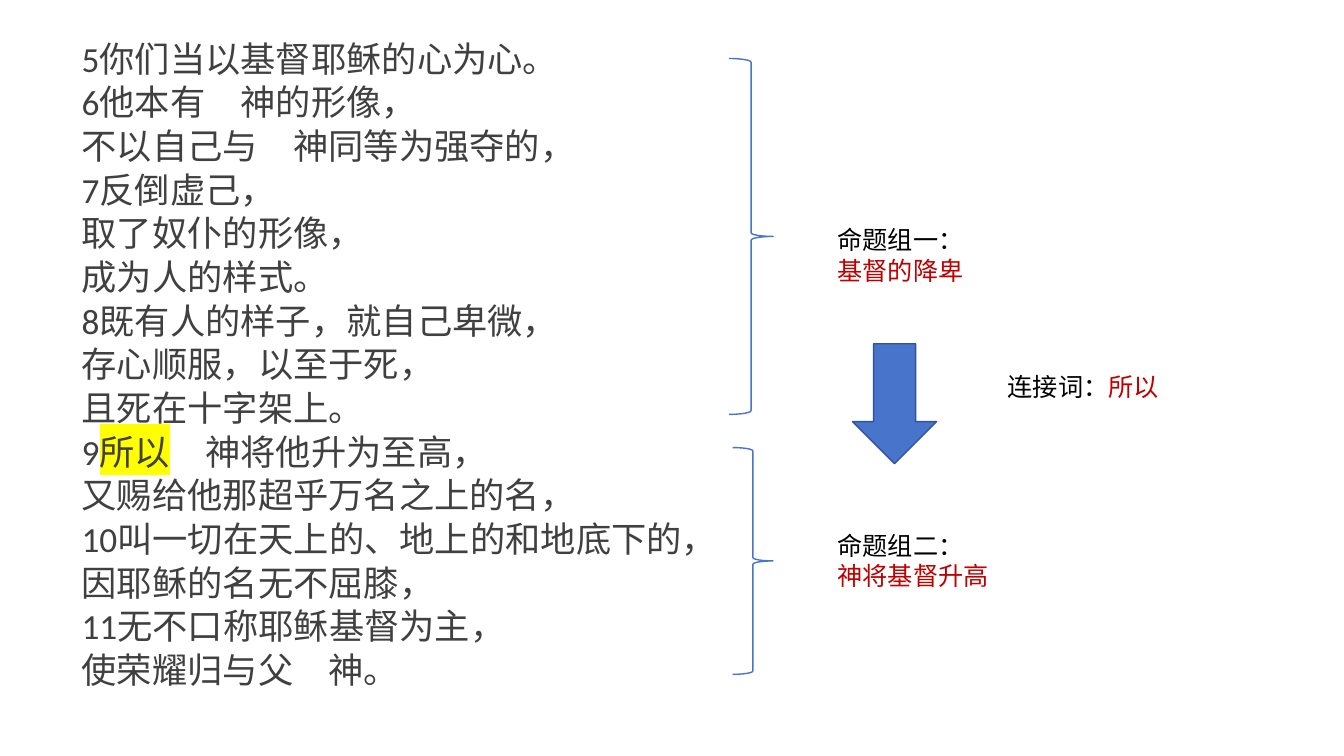
from lxml import etree
from pptx import Presentation, util as u
from pptx.dml.color import RGBColor
from pptx.enum import shapes, text
from pptx.oxml.ns import qn

BLUE, DARK_BLUE = "4874CB", "2E54A1"
BLACK, GREY, RED, YELLOW = "000000", "404040", "C00000", "FFFF00"

VERSES = [
    ["5你们当以基督耶稣的心为心。"],
    ["6他本有　神的形像，"],
    ["不以自己与　神同等为强夺的，"],
    ["7反倒虚己，"],
    ["取了奴仆的形像，"],
    ["成为人的样式。"],
    ["8既有人的样子，就自己卑微，"],
    ["存心顺服，以至于死，"],
    ["且死在十字架上。"],
    ["9", ("所以", YELLOW), "　神将他升为至高，"],
    ["又赐给他那超乎万名之上的名，"],
    ["10叫一切在天上的、地上的和地底下的，"],
    ["因耶稣的名无不屈膝，"],
    ["11无不口称耶稣基督为主，"],
    ["使荣耀归与父　神。"],
]


def color(value):
    return RGBColor.from_string(value)


class SlideBuilder:
    font_name = "Calibri"
    verse_size = 25.2
    label_size = 18

    def __init__(self, presentation):
        self.slide = presentation.slides.add_slide(presentation.slide_layouts[1])
        title = self.slide.shapes.title
        title.element.getparent().remove(title.element)

    def run(self, paragraph, words, size, fill, highlight=None):
        run = paragraph.add_run()
        run.text = words
        run.font.size = u.Pt(size)
        run.font.name = self.font_name
        run.font.color.rgb = color(fill)
        if highlight:
            mark = etree.Element(qn("a:highlight"))
            etree.SubElement(mark, qn("a:srgbClr"), val=highlight)
            run.font.fill
            run.font._element.find(qn("a:solidFill")).addnext(mark)

    def paragraphs(self, frame, count):
        for _ in range(count - 1):
            frame.add_paragraph()
        return frame.paragraphs

    def passage(self, left, top, width, height, verses):
        body = self.slide.placeholders[1]
        body.left, body.top = u.Pt(left), u.Pt(top)
        body.width, body.height = u.Pt(width), u.Pt(height)
        frame = body.text_frame
        frame.auto_size = text.MSO_AUTO_SIZE.NONE
        frame.vertical_anchor = text.MSO_ANCHOR.TOP
        for paragraph, verse in zip(self.paragraphs(frame, len(verses)), verses):
            paragraph.line_spacing = 0.7
            paragraph.space_before = u.Pt(10)
            paragraph.space_after = u.Pt(0)
            properties = paragraph._p.get_or_add_pPr()
            properties.set("marL", "0")
            properties.set("indent", "0")
            etree.SubElement(properties, qn("a:buNone"))
            for part in verse:
                words, highlight = (part, None) if isinstance(part, str) else part
                self.run(paragraph, words, self.verse_size, GREY, highlight)

    def label(self, left, top, width, height, lines):
        box = self.slide.shapes.add_textbox(
            u.Pt(left), u.Pt(top), u.Pt(width), u.Pt(height))
        frame = box.text_frame
        frame.word_wrap = True
        frame.auto_size = text.MSO_AUTO_SIZE.SHAPE_TO_FIT_TEXT
        for paragraph, line in zip(self.paragraphs(frame, len(lines)), lines):
            for words, fill in line:
                self.run(paragraph, words, self.label_size, fill)

    def preset(self, kind, left, top, width, height, line, fill=None):
        shape = self.slide.shapes.add_shape(
            kind, u.Pt(left), u.Pt(top), u.Pt(width), u.Pt(height))
        shape.shadow.inherit = False
        shape.line.color.rgb = color(line)
        shape.line.width = u.Pt(1)
        if fill:
            shape.fill.solid()
            shape.fill.fore_color.rgb = color(fill)
        else:
            shape.fill.background()


def main():
    presentation = Presentation()
    presentation.slide_width = u.Pt(960)
    presentation.slide_height = u.Pt(540)
    builder = SlideBuilder(presentation)

    builder.passage(51.1, 31, 828, 478, VERSES)

    brace = shapes.MSO_SHAPE.RIGHT_BRACE
    builder.preset(brace, 520.7, 41.8, 31.6, 254.2, BLUE)
    builder.preset(brace, 523.4, 319.7, 28.8, 162, BLUE)

    for top, heading, summary in [
        (157, "命题组一：", "基督的降卑"),
        (375.3, "命题组二：", "神将基督升高"),
    ]:
        builder.label(591.1, top, 151.2, 51, [[(heading, BLACK)], [(summary, RED)]])

    builder.preset(shapes.MSO_SHAPE.DOWN_ARROW, 609, 245.5, 60, 85.7, DARK_BLUE, BLUE)
    builder.label(712.8, 261.4, 146.2, 29, [[("连接词：", BLACK), ("所以", RED)]])

    presentation.save("out.pptx")


if __name__ == "__main__":
    main()
